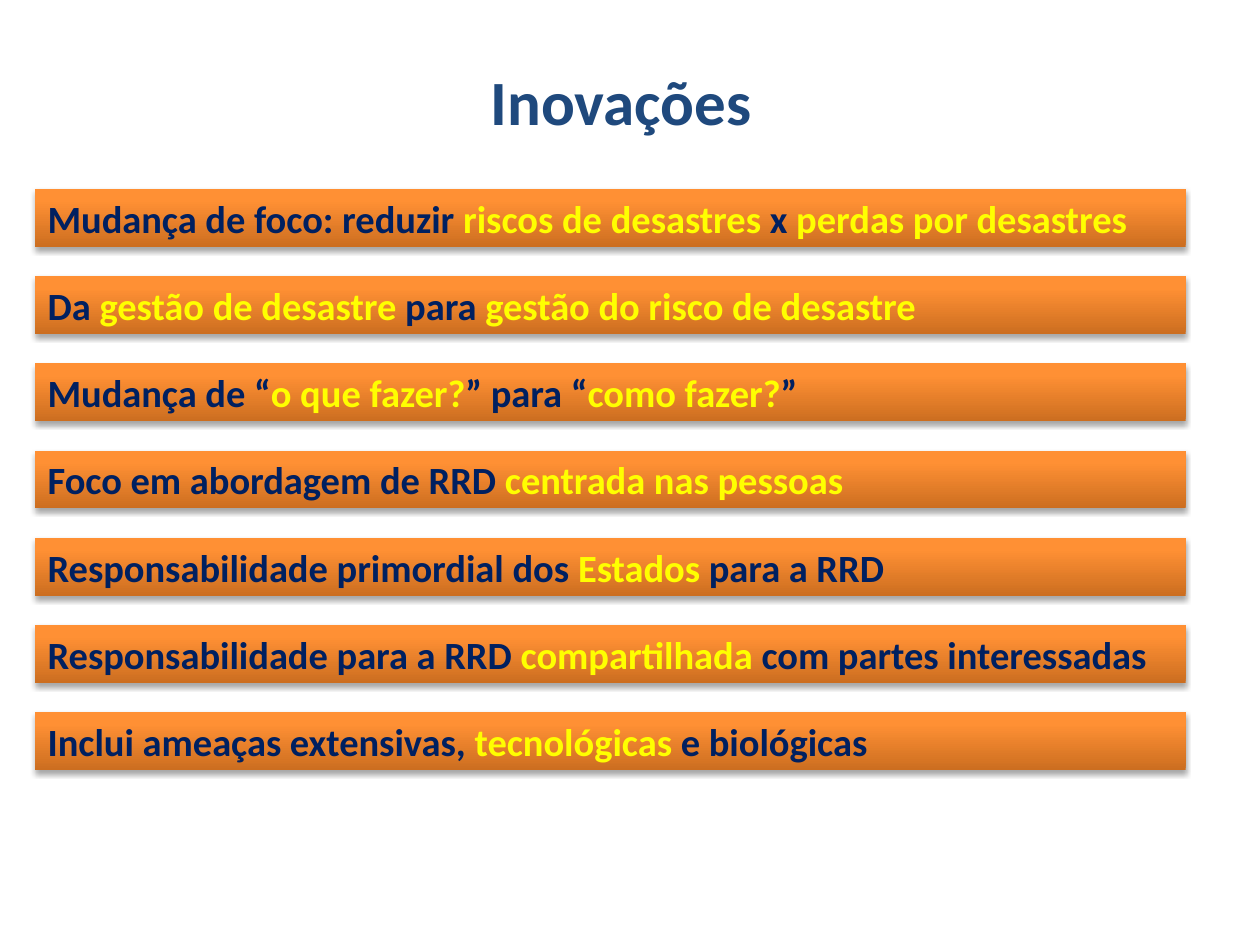
from copy import deepcopy

from pptx import Presentation
from pptx.dml.color import RGBColor
from pptx.enum.shapes import MSO_SHAPE
from pptx.enum.text import MSO_ANCHOR, PP_ALIGN
from pptx.oxml import parse_xml
from pptx.oxml.ns import nsdecls, qn
from pptx.util import Inches, Pt

RECTANGLE = MSO_SHAPE.RECTANGLE
MIDDLE = MSO_ANCHOR.MIDDLE
CENTER, LEFT = PP_ALIGN.CENTER, PP_ALIGN.LEFT

THEME = {
    "title": {"name": "Calibri", "size": Pt(36), "bold": True},
    "body": {"name": "Calibri", "size": Pt(22), "bold": True},
    "title_color": RGBColor.from_string("1F497D"),
    "text_color": RGBColor.from_string("002060"),
    "highlight": RGBColor.from_string("FFFF00"),
    "gradient": [(0, "CC6E20"), (0.8, "FF9034"), (1, "FF9136")],
    "shadow": "000000",
}

# Asterisks enclose the highlighted words.
INNOVATIONS = [
    "Mudança de foco: reduzir *riscos de desastres* x *perdas por desastres*",
    "Da *gestão de desastre *para *gestão do risco de desastre*",
    "Mudança de “*o que fazer?*” para “*como fazer?*”",
    "Foco em abordagem de RRD *centrada nas pessoas*",
    "Responsabilidade primordial dos *Estados* para a RRD",
    "Responsabilidade para a RRD *compartilhada* com partes interessadas",
    "Inclui ameaças extensivas, *tecnológicas* e biológicas",
]
FIRST_TOP, PITCH = 1.5, 0.692


def format_font(font, style, color):
    for attribute, value in THEME[style].items():
        setattr(font, attribute, value)
    font.color.rgb = color


def paint_bar(bar):
    """Give the bar its vertical gradient and soft shadow, without an outline."""
    bar.line.fill.background()
    bar.fill.gradient()
    bar.fill.gradient_angle = 90
    stop_list = bar.element.spPr.find(".//" + qn("a:gsLst"))
    stop_list.append(deepcopy(stop_list[0]))
    for stop, (position, color) in zip(bar.fill.gradient_stops, THEME["gradient"]):
        stop.position = position
        stop.color.rgb = RGBColor.from_string(color)
    bar.shadow.inherit = False
    bar.element.spPr.find(qn("a:effectLst")).append(parse_xml(
        f'<a:outerShdw {nsdecls("a")} blurRad="{Pt(3.1)}" dist="{Pt(1.8)}" '
        f'dir="5400000" rotWithShape="0"><a:srgbClr val="{THEME["shadow"]}">'
        '<a:alpha val="35000"/></a:srgbClr></a:outerShdw>'))


prs = Presentation()
prs.slide_width, prs.slide_height = Inches(10), Inches(7.5)
slide = prs.slides.add_slide(prs.slide_layouts[5])

title = slide.shapes.title
title.left, title.top = Inches(0.43), Inches(0.52)
title.width, title.height = Inches(9), Inches(0.55)
title.text_frame.vertical_anchor = MIDDLE
heading = title.text_frame.paragraphs[0]
heading.alignment = CENTER
heading_run = heading.add_run()
heading_run.text = "Inovações"
format_font(heading_run.font, "title", THEME["title_color"])

for row, innovation in enumerate(INNOVATIONS):
    bar = slide.shapes.add_shape(
        RECTANGLE, Inches(0.28), Inches(FIRST_TOP + row * PITCH),
        Inches(9.13), Inches(0.46))
    paint_bar(bar)
    bar.text_frame.word_wrap = True
    bar.text_frame.vertical_anchor = MIDDLE
    sentence = bar.text_frame.paragraphs[0]
    sentence.alignment = LEFT
    for index, words in enumerate(innovation.split("*")):
        if words:
            run = sentence.add_run()
            run.text = words
            color = THEME["highlight" if index % 2 else "text_color"]
            format_font(run.font, "body", color)

prs.save("out.pptx")
